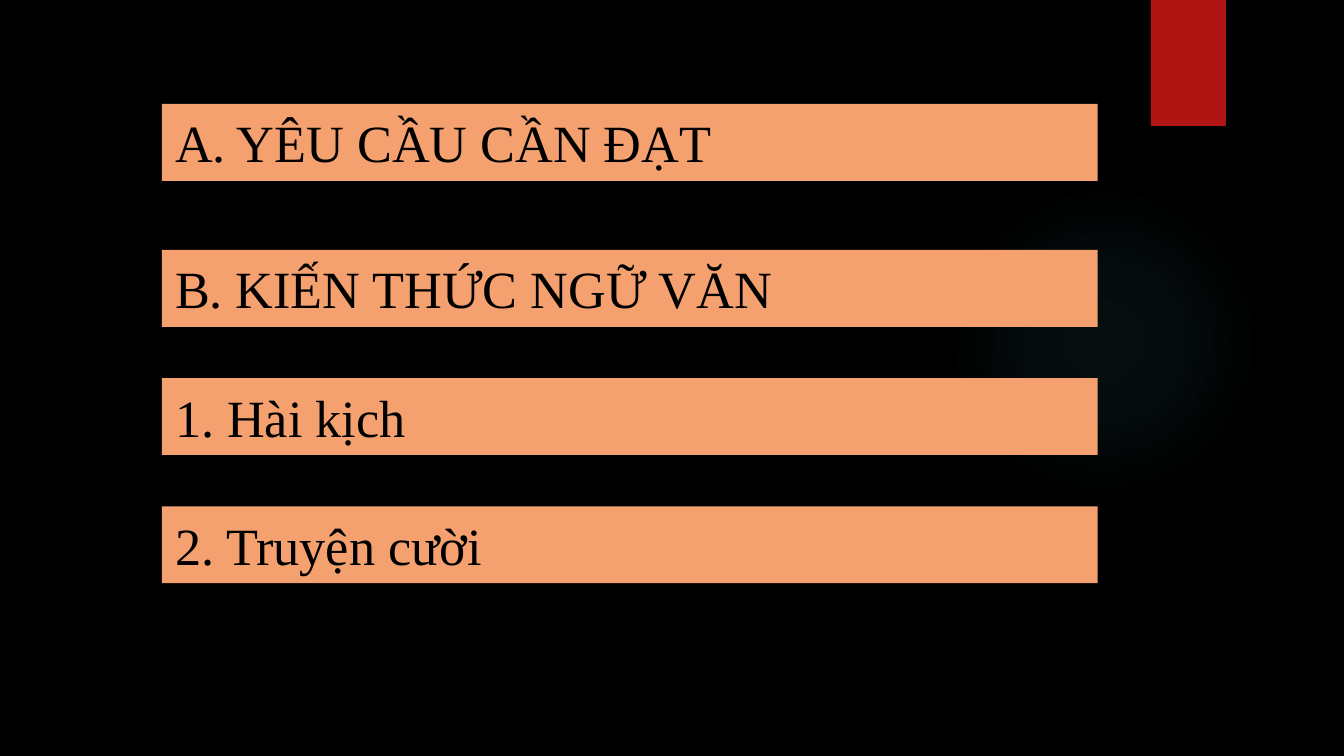
import pptx
import pptx.dml.color
import pptx.enum.shapes
import pptx.enum.text
import pptx.oxml
import pptx.oxml.ns
import pptx.util
from pptx.util import Pt

HEADINGS = [
    ("A. YÊU CẦU CẦN ĐẠT", 55.7),
    ("B. KIẾN THỨC NGỮ VĂN", 133.9),
    ("1. Hài kịch", 202.6),
    ("2. Truyện cười", 271.3),
]
BAR_LEFT, BAR_WIDTH, BAR_HEIGHT = 86.7, 501.4, 41.2
GLOW_STOPS = [(0, 7), (36, 6), (69, 0)]  # position and opacity, percent
NS = pptx.oxml.ns.nsdecls("a")


def rgb(value):
    return pptx.dml.color.RGBColor.from_string(value)


def add_shape(s, kind, left, top, width, height, color):
    sp = s.shapes.add_shape(kind, Pt(left), Pt(top), Pt(width), Pt(height))
    sp.shadow.inherit = False
    sp.fill.solid()
    sp.fill.fore_color.rgb = rgb(color)
    sp.line.fill.background()
    return sp


def fade_out(sp, color, stops):
    """Replace the solid fill by a transparent radial gradient."""
    gs = "".join(
        f'<a:gs pos="{pos * 1000}"><a:srgbClr val="{color}">'
        f'<a:alpha val="{alpha * 1000}"/></a:srgbClr></a:gs>'
        for pos, alpha in stops
    )
    gradient = pptx.oxml.parse_xml(
        f'<a:gradFill {NS} rotWithShape="1"><a:gsLst>{gs}</a:gsLst><a:path path="circle">'
        '<a:fillToRect l="50000" t="50000" r="50000" b="50000"/></a:path></a:gradFill>'
    )
    solid = sp.element.spPr.find(pptx.oxml.ns.qn("a:solidFill"))
    solid.getparent().replace(solid, gradient)


def add_shadow(sp):
    effects = sp.element.spPr.find(pptx.oxml.ns.qn("a:effectLst"))
    effects.append(pptx.oxml.parse_xml(
        f'<a:outerShdw {NS} blurRad="{Pt(3)}" dist="{Pt(2)}" dir="5400000" rotWithShape="0">'
        '<a:srgbClr val="000000"><a:alpha val="45000"/></a:srgbClr></a:outerShdw>'
    ))


def add_heading(s, text, top):
    sp = s.shapes.add_textbox(Pt(BAR_LEFT), Pt(top), Pt(BAR_WIDTH), Pt(BAR_HEIGHT))
    sp.fill.solid()
    sp.fill.fore_color.rgb = rgb("F4A16F")
    tf = sp.text_frame
    tf.word_wrap = True
    tf.auto_size = pptx.enum.text.MSO_AUTO_SIZE.SHAPE_TO_FIT_TEXT
    tf.text = text
    font = tf.paragraphs[0].runs[0].font
    font.name = "Times New Roman"
    font.size = Pt(28)
    font.color.rgb = rgb("000000")


def main():
    prs = pptx.Presentation()
    prs.slide_width, prs.slide_height = Pt(720), Pt(405)
    s = prs.slides.add_slide(prs.slide_layouts[6])
    s.background.fill.solid()
    s.background.fill.fore_color.rgb = rgb("000000")

    kinds = pptx.enum.shapes.MSO_SHAPE
    glow = add_shape(s, kinds.OVAL, 508.3, 99.4, 166.3, 166.3, "50B9C1")
    fade_out(glow, "50B9C1", GLOW_STOPS)
    ribbon = add_shape(s, kinds.RECTANGLE, 616.5, 0, 40.3, 67.5, "B01513")
    add_shadow(ribbon)

    for text, top in HEADINGS:
        add_heading(s, text, top)
    prs.save("out.pptx")


if __name__ == "__main__":
    main()
